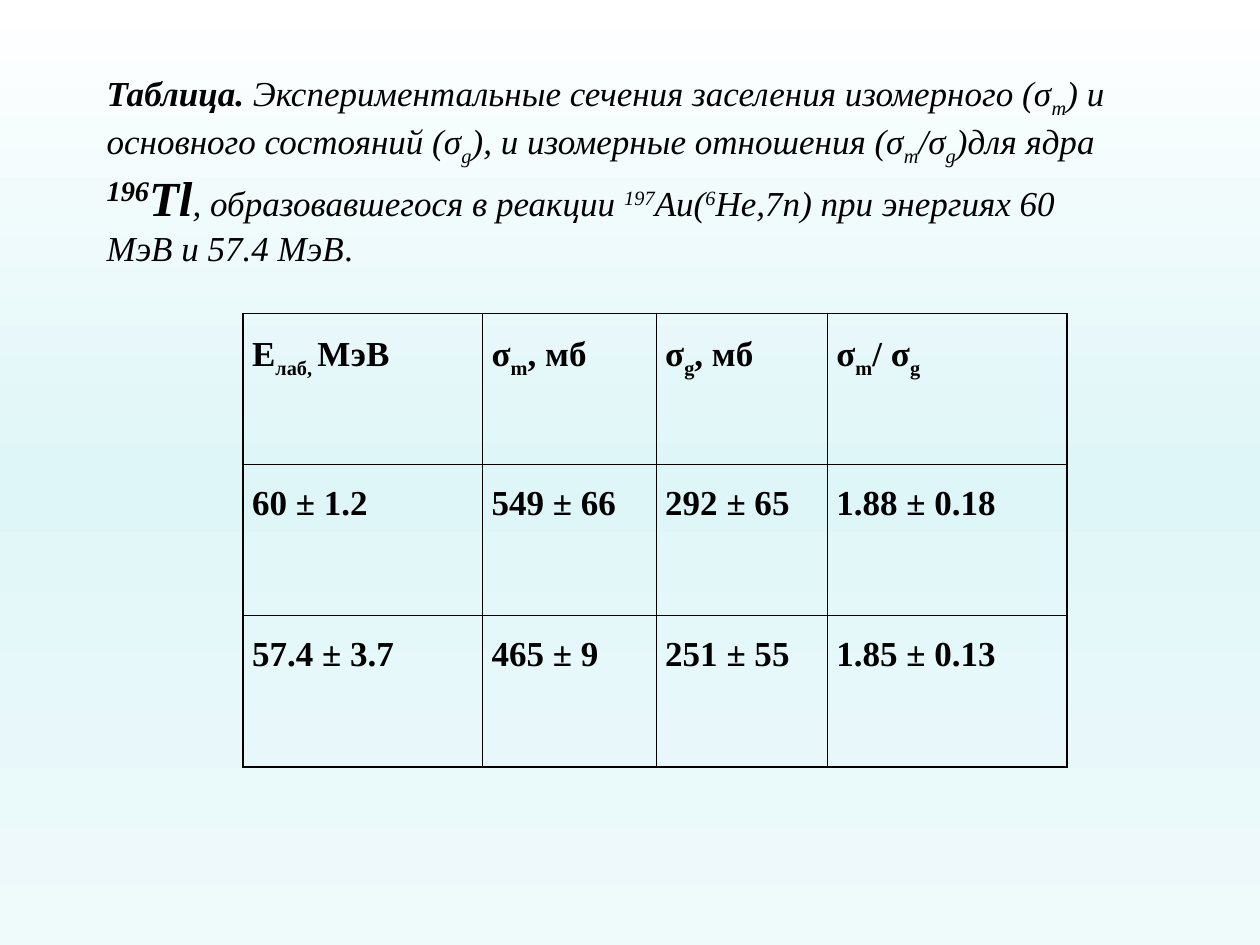
from lxml import etree
from pptx import Presentation
from pptx.dml.color import RGBColor
from pptx.enum.text import MSO_AUTO_SIZE, PP_ALIGN
from pptx.oxml.ns import qn
from pptx.util import Cm, Pt

BLACK = "000000"
BACKGROUND_STOPS = [(0, "FFFFFF"), (50, "DFF6F8"), (100, "EFFAFB")]
SUBSCRIPT, SUPERSCRIPT = -25, 30

COLUMN_WIDTHS = [4.83, 3.5, 3.45, 4.83]
HEADERS = [
    [("E", 0), ("лаб, ", SUBSCRIPT), ("МэВ", 0)],
    [("σ", 0), ("m", SUBSCRIPT), (", мб", 0)],
    [("σ", 0), ("g", SUBSCRIPT), (", мб", 0)],
    [("σ", 0), ("m", SUBSCRIPT), ("/ σ", 0), ("g", SUBSCRIPT)],
]
MEASUREMENTS = [
    ["60 ± 1.2", "549 ± 66", "292 ± 65", "1.88 ± 0.18"],
    ["57.4 ± 3.7", "465 ± 9", "251 ± 55", "1.85 ± 0.13"],
]


def color(hex_string):
    return RGBColor.from_string(hex_string)


def add_text(paragraph, text, size=20, bold=False, italic=False, baseline=0):
    run = paragraph.add_run()
    run.text = text
    font = run.font
    font.name = "Times New Roman"
    font.size = Pt(size)
    font.bold, font.italic = bold, italic
    font.color.rgb = color(BLACK)
    if baseline:
        run._r.get_or_add_rPr().set("baseline", str(baseline * 1000))


def set_background(slide):
    fill = slide.background.fill
    fill.gradient()
    gradient = slide.background._cSld.find(".//" + qn("a:gradFill"))
    stops = gradient.find(qn("a:gsLst"))
    stops.clear()
    for position, hex_string in BACKGROUND_STOPS:
        stop = etree.SubElement(stops, qn("a:gs"), pos=str(position * 1000))
        etree.SubElement(stop, qn("a:srgbClr"), val=hex_string)
    # Top to bottom
    gradient.find(qn("a:lin")).set("ang", "5400000")


def set_borders(cell, hex_string, width):
    properties = cell._tc.get_or_add_tcPr()
    for side in ("lnL", "lnR", "lnT", "lnB"):
        line = etree.SubElement(properties, qn(f"a:{side}"), w=str(Pt(width)))
        fill = etree.SubElement(line, qn("a:solidFill"))
        etree.SubElement(fill, qn("a:srgbClr"), val=hex_string)


def add_caption(slide, left, top, width, height):
    frame = slide.shapes.add_textbox(left, top, width, height).text_frame
    frame.word_wrap = True
    frame.auto_size = MSO_AUTO_SIZE.SHAPE_TO_FIT_TEXT
    paragraph = frame.paragraphs[0]
    nucleus = {"size": 28, "bold": True}
    subscript = {"baseline": SUBSCRIPT}
    superscript = {"baseline": SUPERSCRIPT}
    for text, text_format in [
        ("Таблица. ", {"bold": True}),
        ("Экспериментальные сечения заселения изомерного (σ", {}),
        ("m", subscript),
        (") и основного состояний (σ", {}),
        ("g", subscript),
        ("), и изомерные отношения (σ", {}),
        ("m", subscript),
        ("/σ", {}),
        ("g", subscript),
        (")для ядра ", {}),
        ("196", nucleus | superscript),
        ("Tl", nucleus),
        (", образовавшегося в реакции ", {}),
        ("197", superscript),
        ("Au(", {}),
        ("6", superscript),
        ("He,7n) при энергиях 60 МэВ и 57.4 МэВ", {}),
        (".", {"italic": False}),
    ]:
        add_text(paragraph, text, **({"italic": True} | text_format))


def add_cross_section_table(slide, left, top, width, height):
    rows = [HEADERS] + [[[(value, 0)] for value in row] for row in MEASUREMENTS]
    table = slide.shapes.add_table(
        len(rows), len(COLUMN_WIDTHS), left, top, width, height
    ).table
    table.first_row = table.horz_banding = False
    for column, share in zip(table.columns, COLUMN_WIDTHS):
        column.width = int(width * share / sum(COLUMN_WIDTHS))
    for row_index, row in enumerate(rows):
        for column_index, pieces in enumerate(row):
            cell = table.cell(row_index, column_index)
            cell.margin_left = cell.margin_right = Cm(0.18)
            cell.margin_top = cell.margin_bottom = 0
            set_borders(cell, BLACK, 1)
            cell.fill.background()
            paragraph = cell.text_frame.paragraphs[0]
            paragraph.alignment = PP_ALIGN.JUSTIFY
            paragraph.line_spacing = 1.5
            for text, baseline in pieces:
                add_text(paragraph, text, bold=True, baseline=baseline)


def main():
    presentation = Presentation()
    presentation.slide_width, presentation.slide_height = Cm(25.4), Cm(19.05)
    slide = presentation.slides.add_slide(presentation.slide_layouts[6])
    set_background(slide)
    add_cross_section_table(slide, Cm(4.9), Cm(6.32), Cm(16.61), Cm(9.14))
    add_caption(slide, Cm(1.9), Cm(1.32), Cm(20.8), Cm(4.01))
    presentation.save("out.pptx")


if __name__ == "__main__":
    main()
